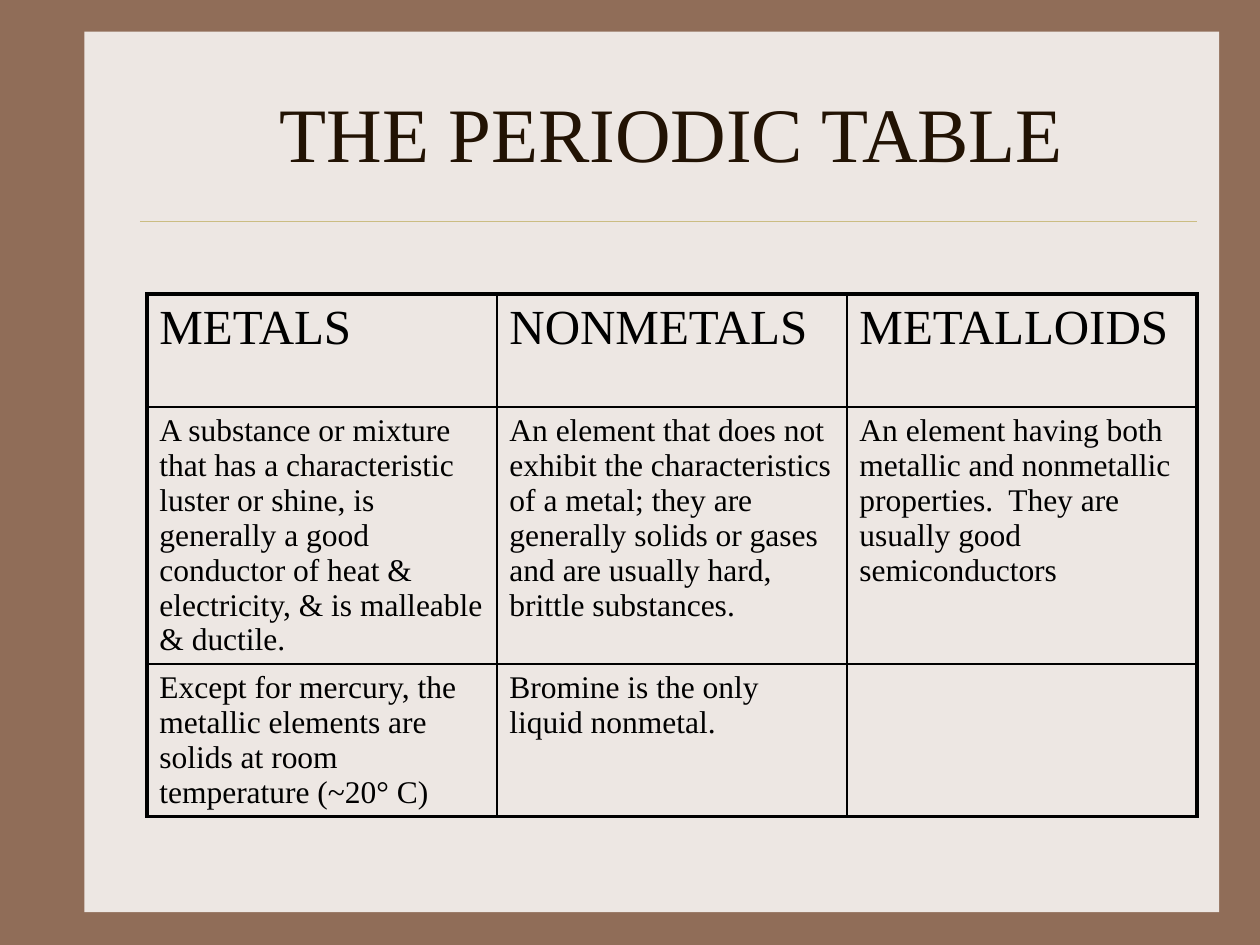
from lxml.etree import SubElement
from pptx import Presentation
from pptx.dml.color import RGBColor
from pptx.enum.shapes import MSO_CONNECTOR, MSO_SHAPE
from pptx.enum.text import MSO_ANCHOR, PP_ALIGN
from pptx.oxml import parse_xml
from pptx.oxml.ns import nsdecls, qn
from pptx.util import Cm, Pt

COLORS = {
    "background": "906D58",
    "panel": "EDE7E3",
    "rule": "CBBD83",
    "title": "221304",
    "table": "000000",
}
FONT = "Times New Roman"
OUTER_BORDER, INNER_BORDER = Pt(2.25), Pt(1)

ROWS = [
    ["METALS", "NONMETALS", "METALLOIDS"],
    [
        "A substance or mixture that has a characteristic luster or shine, is "
        "generally a good conductor of heat & electricity, & is malleable & ductile.",
        "An element that does not exhibit the characteristics of a metal; they are "
        "generally solids or gases and are usually hard, brittle substances.",
        "An element having both metallic and nonmetallic properties.  "
        "They are usually good semiconductors",
    ],
    [
        "Except for mercury, the metallic elements are solids at room "
        "temperature (~20° C)",
        "Bromine is the only liquid nonmetal.",
        "",
    ],
]
ROW_HEIGHTS = [Cm(2.28), Cm(5.18), Cm(3.07)]


def color(name):
    return RGBColor.from_string(COLORS[name])


def format_text(paragraph, size, color_name):
    for run in paragraph.runs:
        run.font.name = FONT
        run.font.size = Pt(size)
        run.font.color.rgb = color(color_name)


def add_backdrop(slide, left, top, width, height):
    """Draw the pale panel and the thin rule under the title."""
    slide.background.fill.solid()
    slide.background.fill.fore_color.rgb = color("background")

    panel = slide.shapes.add_shape(MSO_SHAPE.RECTANGLE, left, top, width, height)
    panel.shadow.inherit = False
    panel.fill.solid()
    panel.fill.fore_color.rgb = color("panel")
    panel.line.fill.background()

    rule_top = top + Cm(3.81)
    rule = slide.shapes.add_connector(
        MSO_CONNECTOR.STRAIGHT,
        left + Cm(1.12), rule_top, left + width - Cm(0.46), rule_top,
    )
    rule.line.color.rgb = color("rule")
    rule.line.width = Pt(0.25)
    SubElement(rule._element.spPr, qn("a:effectLst"))

    # The title placeholder comes first, so lift it above the panel.
    slide.shapes._spTree.append(slide.shapes.title._element)


def set_title(slide, left, top, width, height):
    title = slide.shapes.title
    title.left, title.top, title.width, title.height = left, top, width, height
    frame = title.text_frame
    frame.text = "THE PERIODIC TABLE"
    frame.vertical_anchor = MSO_ANCHOR.MIDDLE
    frame.paragraphs[0].alignment = PP_ALIGN.CENTER
    format_text(frame.paragraphs[0], 44, "title")


def set_borders(cell, widths):
    """Add left, right, top and bottom borders, given as widths in that order."""
    properties = cell._tc.get_or_add_tcPr()
    for position, (side, width) in enumerate(zip("LRTB", widths)):
        border = parse_xml(
            f'<a:ln{side} {nsdecls("a")} w="{width}"><a:solidFill>'
            f'<a:srgbClr val="{COLORS["table"]}"/></a:solidFill></a:ln{side}>'
        )
        properties.insert(position, border)


def add_elements_table(slide, left, top, width):
    row_count, column_count = len(ROWS), len(ROWS[0])
    table = slide.shapes.add_table(
        row_count, column_count, left, top, width, sum(ROW_HEIGHTS)
    ).table
    table.first_row = table.horz_banding = False

    for row_index, texts in enumerate(ROWS):
        table.rows[row_index].height = ROW_HEIGHTS[row_index]
        for column_index, text in enumerate(texts):
            cell = table.cell(row_index, column_index)
            cell.fill.background()
            cell.text_frame.text = text
            size = 28 if row_index == 0 else 18
            format_text(cell.text_frame.paragraphs[0], size, "table")
            on_edge = [
                column_index == 0,
                column_index == column_count - 1,
                row_index == 0,
                row_index == row_count - 1,
            ]
            set_borders(
                cell, [OUTER_BORDER if edge else INNER_BORDER for edge in on_edge]
            )


def main():
    presentation = Presentation()
    presentation.slide_width = Cm(25.4)
    presentation.slide_height = Cm(19.05)
    slide = presentation.slides.add_slide(presentation.slide_layouts[5])

    add_backdrop(slide, Cm(1.7), Cm(0.64), Cm(22.88), Cm(17.75))
    set_title(slide, Cm(2.96), Cm(1.06), Cm(21.17), Cm(3.18))
    add_elements_table(slide, Cm(2.96), Cm(5.93), Cm(21.17))
    presentation.save("out.pptx")


if __name__ == "__main__":
    main()
